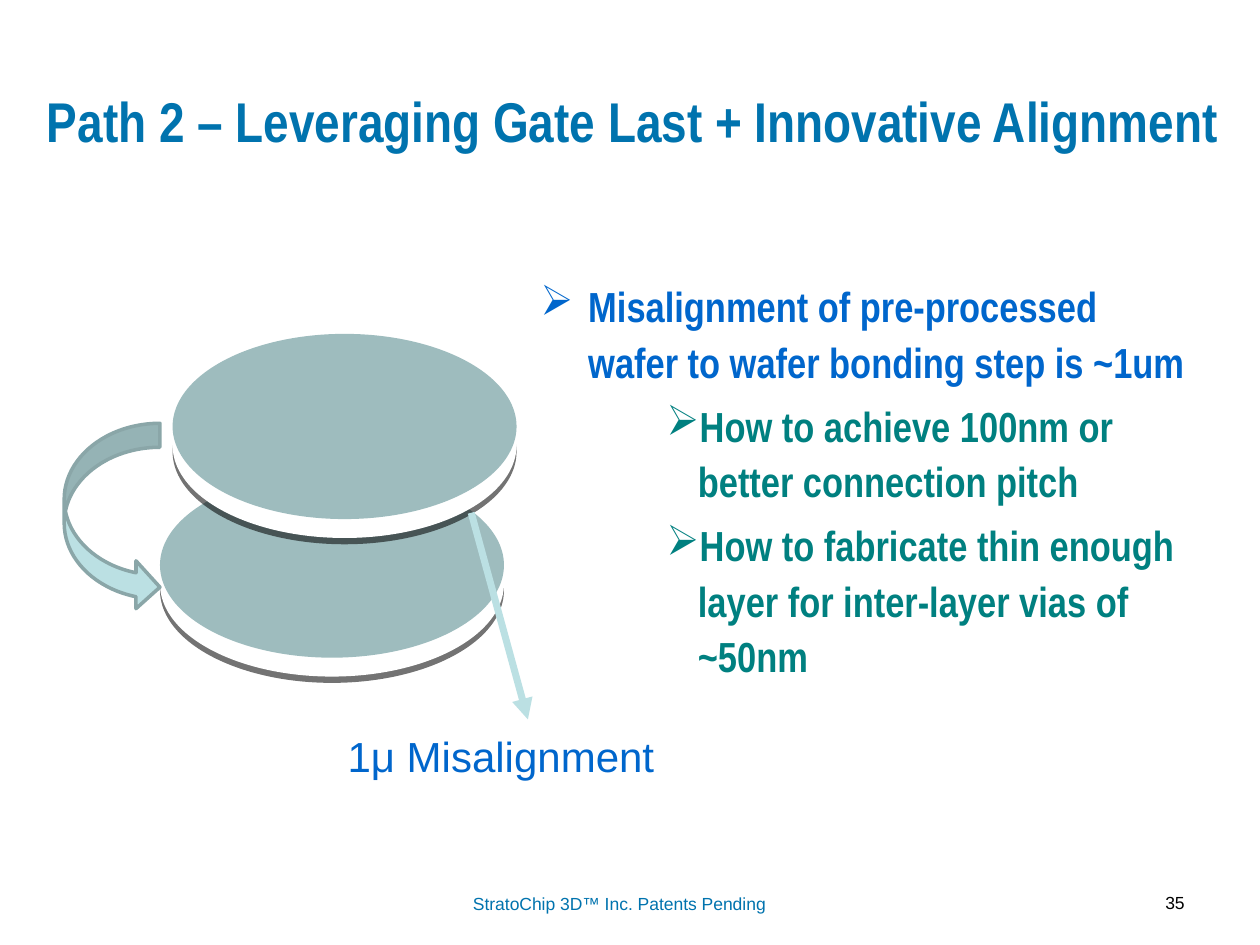
from lxml import etree
from pptx import Presentation
from pptx.dml.color import RGBColor
from pptx.enum.shapes import MSO_CONNECTOR, MSO_SHAPE
from pptx.enum.text import MSO_ANCHOR, PP_ALIGN
from pptx.oxml.ns import qn
from pptx.util import Inches, Pt

OVAL = MSO_SHAPE.OVAL
CURVE = MSO_SHAPE.CURVED_RIGHT_ARROW
LINE = MSO_CONNECTOR.STRAIGHT
LEFT, MID, RIGHT = PP_ALIGN.LEFT, PP_ALIGN.CENTER, PP_ALIGN.RIGHT
TOP, CENTER = MSO_ANCHOR.TOP, MSO_ANCHOR.MIDDLE

NAVY = RGBColor(0x00, 0x73, 0xAE)
BLUE = RGBColor(0x00, 0x66, 0xCC)
TEAL = RGBColor(0x00, 0x80, 0x80)
PALE = RGBColor(0xBB, 0xE0, 0xE3)
FACE = RGBColor(0x9E, 0xBC, 0xBE)
EDGE = RGBColor(0x8A, 0xA6, 0xA8)
WHITE = RGBColor(0xFF, 0xFF, 0xFF)
BLACK = RGBColor(0x00, 0x00, 0x00)

POINTS = [
    ("Misalignment of pre-processed wafer to wafer bonding step is ~1um",
     0, 0.38, 0.38, BLUE),
    ("How to achieve 100nm or better connection pitch", 2, 1.25, 0.25, TEAL),
    ("How to fabricate thin enough layer for inter-layer vias of ~50nm",
     2, 1.25, 0.25, TEAL),
]


def style(para, size, color, face="Arial", bold=False):
    font = para.font
    font.size, font.name, font.bold = Pt(size), face, bold
    font.color.rgb = color


def add_box(slide, box):
    frame = slide.shapes.add_textbox(*map(Inches, box)).text_frame
    frame.word_wrap = True
    return frame


def add_label(slide, box, text, size, color, align=LEFT, anchor=TOP, **look):
    frame = add_box(slide, box)
    frame.text = text
    frame.vertical_anchor = anchor
    para = frame.paragraphs[0]
    para.alignment = align
    style(para, size, color, **look)
    return para


def add_points(slide, box):
    frame = add_box(slide, box)
    for i, (text, level, left, hang, color) in enumerate(POINTS):
        para = frame.add_paragraph() if i else frame.paragraphs[0]
        para.text = text
        para.level = level
        para.line_spacing = 1.1
        if i:
            para.space_before = Pt(5)
        props = para._p.get_or_add_pPr()
        props.set("marL", str(Inches(left)))
        props.set("indent", str(-Inches(hang)))
        etree.SubElement(props, qn("a:buChar")).set("char", "➢")
        style(para, 24, color, "Arial Narrow", True)


def add_form(slide, kind, box, color):
    shape = slide.shapes.add_shape(kind, *map(Inches, box))
    shape.shadow.inherit = False
    shape.fill.solid()
    shape.fill.fore_color.rgb = color
    shape.line.fill.background()
    return shape


def add_wafer(slide, left, top):
    wide, high = 2.73, 1.47
    shade = add_form(slide, OVAL, (left, top + 0.2, wide, high), BLACK)
    tone = shade.fill._xPr.find(".//" + qn("a:srgbClr"))
    etree.SubElement(tone, qn("a:alpha")).set("val", "55000")
    add_form(slide, OVAL, (left, top + 0.15, wide, high), WHITE)
    add_form(slide, OVAL, (left, top, wide, high), FACE)


def add_turn(slide, box):
    turn = add_form(slide, CURVE, box, PALE)
    turn.line.color.rgb = EDGE
    turn.line.width = Pt(2)


def add_arrow(slide, start, end):
    arrow = slide.shapes.add_connector(LINE, *map(Inches, start + end))
    arrow.line.color.rgb = PALE
    arrow.line.width = Pt(4)
    line = arrow.line._get_or_add_ln()
    etree.SubElement(line, qn("a:tailEnd")).set("type", "triangle")
    etree.SubElement(arrow._element.spPr, qn("a:effectLst"))


def main():
    deck = Presentation()
    deck.slide_width, deck.slide_height = Inches(10), Inches(7.5)
    slide = deck.slides.add_slide(deck.slide_layouts[6])

    add_label(slide, (3.33, 7.04, 3.17, 0.26),
              "StratoChip 3D™ Inc. Patents Pending", 10, NAVY, MID)
    add_label(slide, (8.39, 7.03, 1.11, 0.33), "35", 10, BLACK, RIGHT)
    add_label(slide, (0.17, 0.5, 9.71, 0.91),
              "Path 2 – Leveraging Gate Last + Innovative Alignment",
              32, NAVY, MID, CENTER, face="Arial Narrow", bold=True)
    add_points(slide, (4.19, 2.14, 5.39, 3.93))

    add_wafer(slide, 1.27, 3.75)
    add_turn(slide, (0.51, 3.36, 0.76, 1.49))
    add_wafer(slide, 1.37, 2.65)
    note = add_label(slide, (2.66, 5.71, 3.05, 0.51),
                     "1μ Misalignment", 24, BLUE)
    note.line_spacing = 1.1
    add_arrow(slide, (3.74, 4.07), (4.19, 5.71))

    deck.save("out.pptx")


if __name__ == "__main__":
    main()
